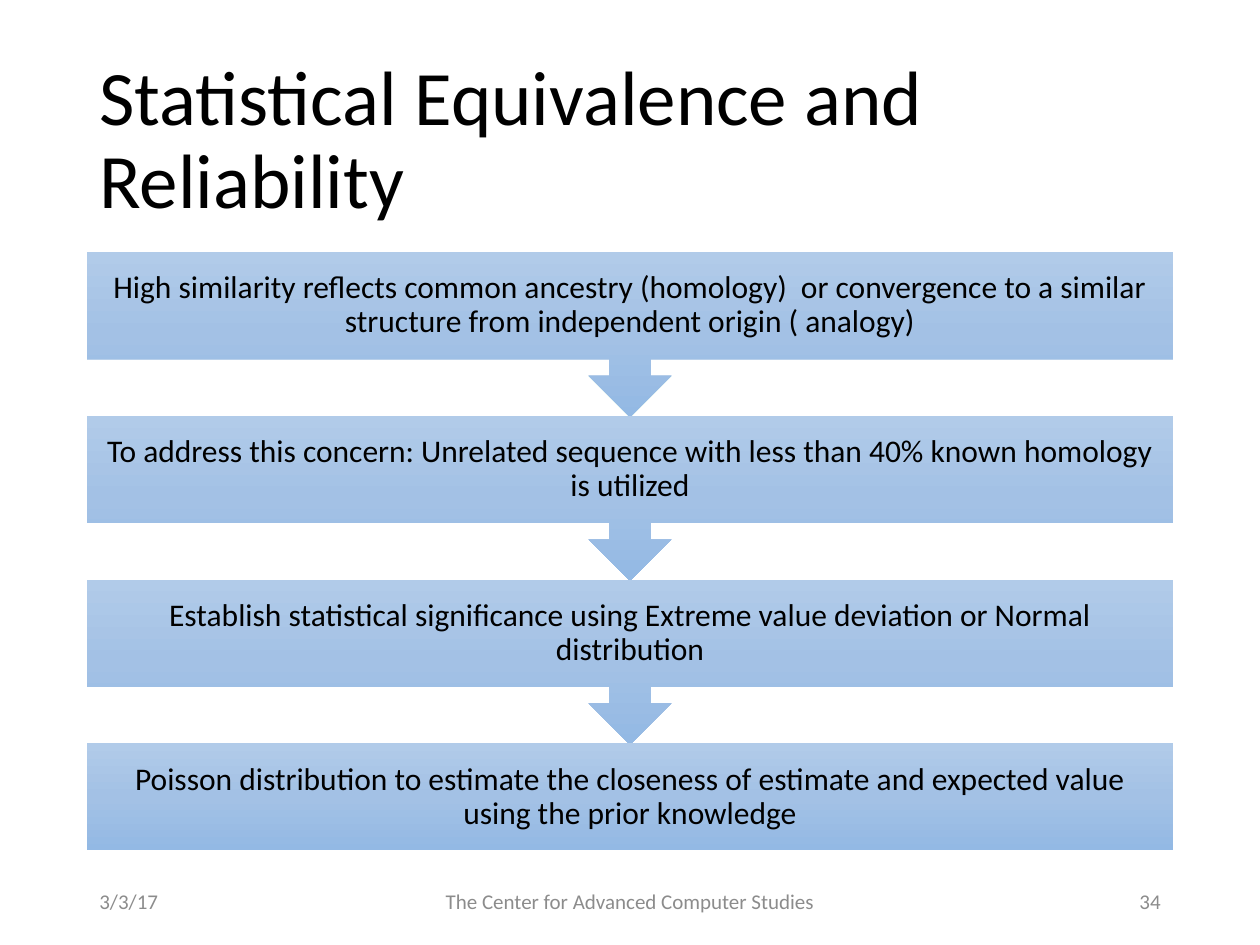
from copy import deepcopy

from pptx import Presentation, util as u
from pptx.dml.color import RGBColor
from pptx.enum import shapes, text

BLACK = RGBColor(0x00, 0x00, 0x00)
GREY = RGBColor(0x8C, 0x8C, 0x8C)
BLUES = [RGBColor(0xB1, 0xCB, 0xE9), RGBColor(0xA3, 0xC1, 0xE5), RGBColor(0x93, 0xB9, 0xE4)]
FONT = "Calibri"
LEFT, WIDTH = 0.69, 8.62
STEPS = [
    "High similarity reflects common ancestry (homology)  or convergence to a similar structure from independent origin ( analogy)",
    "To address this concern: Unrelated sequence with less than 40% known homology is utilized",
    "Establish statistical significance using Extreme value deviation or Normal distribution",
    "Poisson distribution to estimate the closeness of estimate and expected value using the prior knowledge",
]


def write(sp, words, size, color, align, spacing=1.0):
    """Put one vertically centred paragraph into a shape."""
    tf = sp.text_frame
    tf.word_wrap = True
    tf.vertical_anchor = text.MSO_ANCHOR.MIDDLE
    p = tf.paragraphs[0]
    p.text = words
    p.alignment = align
    p.line_spacing = spacing
    p.font.name, p.font.size, p.font.color.rgb = FONT, u.Pt(size), color
    return tf


def add_text(s, box, *style):
    """Add a text box in the given box of inches."""
    write(s.shapes.add_textbox(*map(u.Inches, box)), *style)


def shade(sp):
    """Fill a shape with the three blues from top to bottom."""
    sp.fill.gradient()
    sp.fill.gradient_angle = 270
    first = sp._element.spPr.find(".//{*}gs")
    first.addnext(deepcopy(first))
    for i, (stop, color) in enumerate(zip(sp.fill.gradient_stops, BLUES)):
        stop.position = i / 2
        stop.color.rgb = color


def add_flow(s, box, steps):
    """Stack the steps down the box, each callout pointing at the next."""
    left, top, width, height = box
    body = 0.85
    pitch = (height - body) / (len(steps) - 1)
    for i, words in enumerate(steps):
        last = i == len(steps) - 1
        kind = shapes.MSO_SHAPE.RECTANGLE if last else shapes.MSO_SHAPE.DOWN_ARROW_CALLOUT
        tall = body if last else pitch + 0.01
        sp = s.shapes.add_shape(kind, *map(u.Inches, (left, top + i * pitch, width, tall)))
        sp.shadow.inherit = False
        sp.line.fill.background()
        shade(sp)
        tf = write(sp, words, 18, BLACK, text.PP_ALIGN.CENTER, 0.9)
        tf.margin_left = tf.margin_right = tf.margin_top = tf.margin_bottom = u.Inches(0.14)


def add_footer(s, box):
    """Set date, centre name and slide number along the box."""
    left, top, width, height = box
    side, middle = 2.25, 3.38
    parts = [
        ("3/3/17", 0, side, text.PP_ALIGN.LEFT),
        ("The Center for Advanced Computer Studies", (width - middle) / 2, middle, text.PP_ALIGN.CENTER),
        ("34", width - side, side, text.PP_ALIGN.RIGHT),
    ]
    for words, offset, wide, align in parts:
        add_text(s, (left + offset, top, wide, height), words, 12, GREY, align)


def main():
    """Build and save the slide."""
    prs = Presentation()
    prs.slide_width, prs.slide_height = u.Inches(10), u.Inches(7.5)
    s = prs.slides.add_slide(prs.slide_layouts[6])
    add_text(s, (LEFT, 0.4, WIDTH, 1.45), "Statistical Equivalence and Reliability",
             44, BLACK, text.PP_ALIGN.LEFT, 0.9)
    add_flow(s, (LEFT, 2, WIDTH, 4.75), STEPS)
    add_footer(s, (LEFT, 6.95, WIDTH, 0.4))
    prs.save("out.pptx")


if __name__ == "__main__":
    main()
